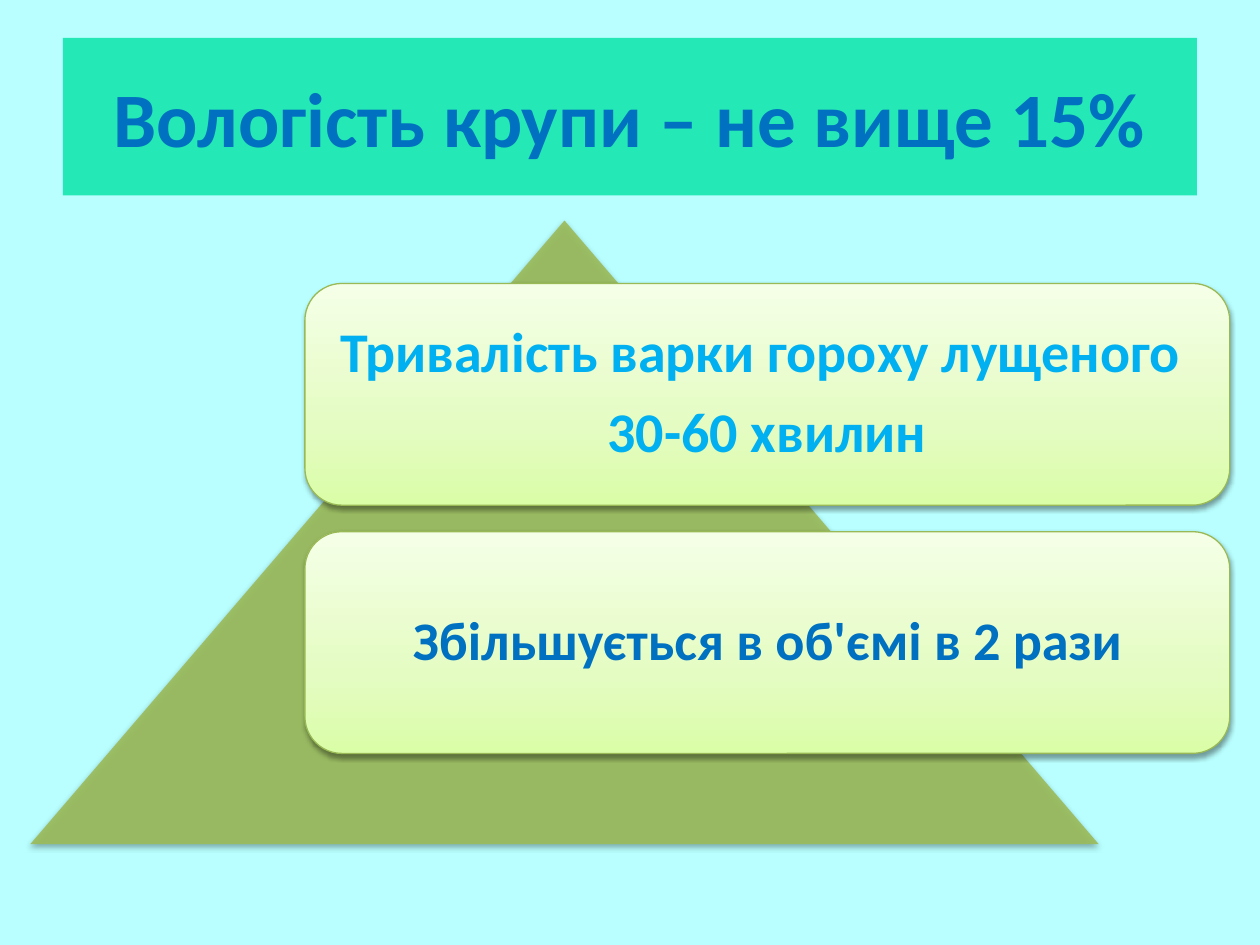
from dataclasses import dataclass

from lxml import etree
from pptx import Presentation
from pptx.dml.color import RGBColor
from pptx.enum.shapes import MSO_SHAPE
from pptx.enum.text import MSO_ANCHOR, PP_ALIGN
from pptx.oxml import parse_xml
from pptx.oxml.ns import qn
from pptx.util import Inches, Pt

RECT = MSO_SHAPE.RECTANGLE
ROUND = MSO_SHAPE.ROUNDED_RECTANGLE
PEAK = MSO_SHAPE.ISOSCELES_TRIANGLE
MIDDLE, CENTER = MSO_ANCHOR.MIDDLE, PP_ALIGN.CENTER

SKY = RGBColor(0xB9, 0xFF, 0xFF)
MINT = RGBColor(0x24, 0xE8, 0xB5)
OLIVE = RGBColor(0x9B, 0xBB, 0x59)
EDGE = RGBColor(0x98, 0xB9, 0x55)
BLUE = RGBColor(0x00, 0x70, 0xC0)
AZURE = RGBColor(0x00, 0xB0, 0xF0)
BLACK = RGBColor(0, 0, 0)
# Light green, from the bottom of a card to its top
STOPS = (
    (0, RGBColor(0xDA, 0xFD, 0xA7)),
    (35, RGBColor(0xE4, 0xFC, 0xC2)),
    (100, RGBColor(0xF5, 0xFF, 0xE7)),
)

WIDE, HIGH = Inches(10), Inches(7.5)
FONT = "Calibri"
NS = 'xmlns:a="http://schemas.openxmlformats.org/drawingml/2006/main"'


@dataclass
class Box:
    """Left, top, width and height in inches."""
    left: float
    top: float
    width: float
    height: float


@dataclass
class Card:
    lines: tuple[str, ...]
    size: float
    color: RGBColor


CARDS = (
    Card(("Тривалість варки гороху лущеного ", "30-60 хвилин"), 32, AZURE),
    Card(("Збільшується в об'ємі в 2 рази",), 31, BLUE),
)
FIRST = Box(2.42, 2.25, 7.34, 1.76)
PITCH = 1.97


def add_box(slide, kind, box: Box, fill: RGBColor | None = None):
    shape = slide.shapes.add_shape(
        kind, Inches(box.left), Inches(box.top),
        Inches(box.width), Inches(box.height))
    shape.shadow.inherit = False
    shape.line.fill.background()
    if fill is not None:
        shape.fill.solid()
        shape.fill.fore_color.rgb = fill
    return shape


def add_shade(shape, alpha: int, dist: float) -> None:
    """Give the shape a soft shadow below it."""
    effects = shape._element.spPr.find(qn("a:effectLst"))
    effects.append(parse_xml(
        f'<a:outerShdw {NS} blurRad="{Pt(3.1)}" dist="{Pt(dist)}" '
        f'dir="5400000" rotWithShape="0"><a:srgbClr val="{BLACK}">'
        f'<a:alpha val="{alpha * 1000}"/></a:srgbClr></a:outerShdw>'))


def add_blend(shape) -> None:
    """Fill the shape with the three-stop gradient."""
    shape.fill.gradient()
    grad = shape._element.spPr.find(qn("a:gradFill"))
    stops = "".join(
        f'<a:gs pos="{pos * 1000}"><a:srgbClr val="{color}"/></a:gs>'
        for pos, color in STOPS)
    new = parse_xml(
        f'<a:gradFill {NS} rotWithShape="1"><a:gsLst>{stops}</a:gsLst>'
        '<a:lin ang="16200000" scaled="0"/></a:gradFill>')
    grad.getparent().replace(grad, new)


def put_text(shape, lines: tuple[str, ...], *, size: float, color: RGBColor,
             inset: float = 0.1, spacing: float = 1, after: float = 0) -> None:
    frame = shape.text_frame
    frame.word_wrap = True
    frame.vertical_anchor = MIDDLE
    frame.margin_left = frame.margin_right = Inches(inset)
    frame.margin_top = frame.margin_bottom = Inches(inset)
    for i, line in enumerate(lines):
        para = frame.add_paragraph() if i else frame.paragraphs[0]
        para.alignment = CENTER
        para.line_spacing = spacing
        para.space_after = Pt(after)
        run = para.add_run()
        run.text = line
        font = run.font
        font.name, font.size, font.bold = FONT, Pt(size), True
        font.color.rgb = color


def add_card(slide, card: Card, row: int) -> None:
    box = Box(FIRST.left, FIRST.top + row * PITCH, FIRST.width, FIRST.height)
    shape = add_box(slide, ROUND, box)
    add_blend(shape)
    shape.line.color.rgb = EDGE
    shape.line.width = Pt(0.75)
    add_shade(shape, 38, 1.6)
    put_text(shape, card.lines, size=card.size, color=card.color,
             inset=0.13, spacing=0.9, after=11)


def main() -> None:
    deck = Presentation()
    deck.slide_width, deck.slide_height = WIDE, HIGH
    slide = deck.slides.add_slide(deck.slide_layouts[6])
    slide.background.fill.solid()
    slide.background.fill.fore_color.rgb = SKY

    # Title band
    title = add_box(slide, RECT, Box(0.5, 0.3, 9, 1.25), MINT)
    put_text(title, ("Вологість крупи – не вище 15%",), size=44, color=BLUE)

    # Pyramid, slightly see-through
    peak = add_box(slide, PEAK, Box(0.24, 1.75, 8.48, 4.95), OLIVE)
    tint = peak._element.spPr.find(qn("a:solidFill"))[0]
    etree.SubElement(tint, qn("a:alpha"), val="90000")
    add_shade(peak, 35, 1.8)

    # Cards over the pyramid
    for row, card in enumerate(CARDS):
        add_card(slide, card, row)

    deck.save("out.pptx")


if __name__ == "__main__":
    main()
